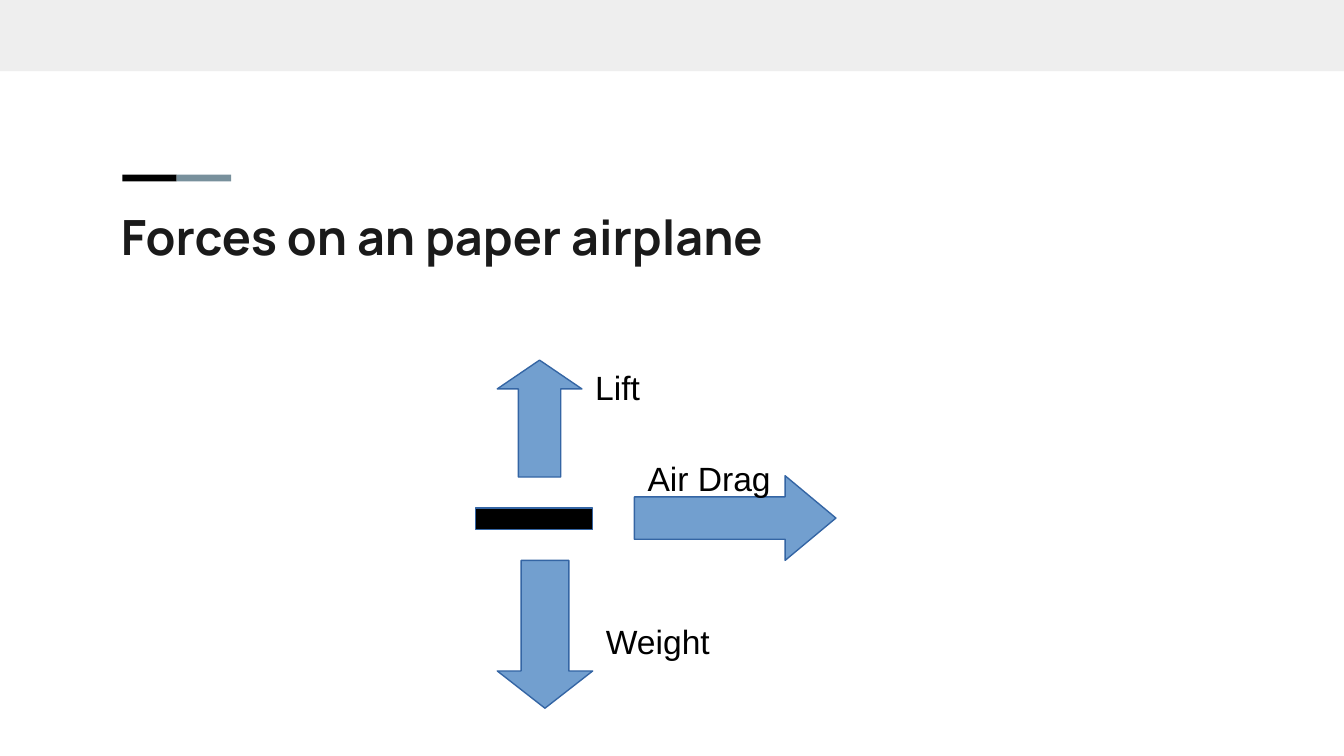
from pptx import Presentation
from pptx.dml.color import RGBColor
from pptx.enum.shapes import MSO_SHAPE
from pptx.enum.text import MSO_ANCHOR, MSO_AUTO_SIZE, PP_ALIGN
from pptx.util import Inches, Pt

BLACK = RGBColor(0x00, 0x00, 0x00)
INK = RGBColor(0x1A, 0x1A, 0x1A)
BAND = RGBColor(0xEE, 0xEE, 0xEE)
SLATE = RGBColor(0x78, 0x90, 0x9C)
ARROW = RGBColor(0x72, 0x9F, 0xCF)
OUTLINE = RGBColor(0x34, 0x65, 0xA4)

SLIDE_W = Inches(10)
SLIDE_H = SLIDE_W * 9 // 16
COLUMNS = 100
CELL = SLIDE_W / COLUMNS

FORCES = [
    (MSO_SHAPE.UP_ARROW, (37, 26.8, 6.3, 8.7), 0.34,
     "Lift", (43.3, 26.8, 13.4, 3.8)),
    (MSO_SHAPE.DOWN_ARROW, (37, 41.7, 7.1, 11), 0.39,
     "Weight", (44.1, 45.7, 10.2, 3.8)),
    (MSO_SHAPE.RIGHT_ARROW, (47.2, 35.4, 15, 6.3), 0.6,
     "Air Drag", (47.2, 33.6, 13.4, 6.6)),
]


def cells(*counts):
    return [round(n * CELL) for n in counts]


def add_block(s, kind, box, fill, line=None):
    sp = s.shapes.add_shape(kind, *cells(*box))
    sp.shadow.inherit = False
    sp.fill.solid()
    sp.fill.fore_color.rgb = fill
    if line is None:
        sp.line.fill.background()
    else:
        sp.line.color.rgb = line
        sp.line.width = Pt(0.75)
    return sp


def add_arrow(s, kind, box, head):
    sp = add_block(s, kind, box, ARROW, OUTLINE)
    sp.adjustments[0] = 0.5
    sp.adjustments[1] = head


def write(tf, text, font, size, color, bold=False):
    tf.word_wrap = True
    tf.auto_size = MSO_AUTO_SIZE.NONE
    tf.vertical_anchor = MSO_ANCHOR.TOP
    p = tf.paragraphs[0]
    p.alignment = PP_ALIGN.LEFT
    r = p.add_run()
    r.text = text
    r.font.name = font
    r.font.size = Pt(size)
    r.font.bold = bold
    r.font.color.rgb = color


def add_title(s, text, box):
    sp = s.shapes.title
    sp.left, sp.top, sp.width, sp.height = cells(*box)
    tf = sp.text_frame
    tf.margin_left = tf.margin_right = tf.margin_top = tf.margin_bottom = Inches(0.1)
    write(tf, text, "Manrope", 26, INK, bold=True)


def add_label(s, text, box):
    sp = s.shapes.add_textbox(*cells(*box))
    write(sp.text_frame, text, "Arial", 18, BLACK)


def main():
    prs = Presentation()
    prs.slide_width, prs.slide_height = SLIDE_W, SLIDE_H
    s = prs.slides.add_slide(prs.slide_layouts[5])

    add_block(s, MSO_SHAPE.RECTANGLE, (0, 0, COLUMNS, 5.3), BAND)
    for i, color in enumerate((BLACK, SLATE)):
        add_block(s, MSO_SHAPE.RECTANGLE, (9.1 + 4.05 * i, 13, 4.05, 0.5), color)
    add_title(s, "Forces on an paper airplane", (8, 14.4, 84.1, 5.8))

    for kind, box, head, _, _ in FORCES:
        add_arrow(s, kind, box, head)
    add_block(s, MSO_SHAPE.RECTANGLE, (35.4, 37.8, 8.7, 1.6), BLACK, OUTLINE)
    for _, _, _, text, box in FORCES:
        add_label(s, text, box)

    prs.save("out.pptx")


if __name__ == "__main__":
    main()
